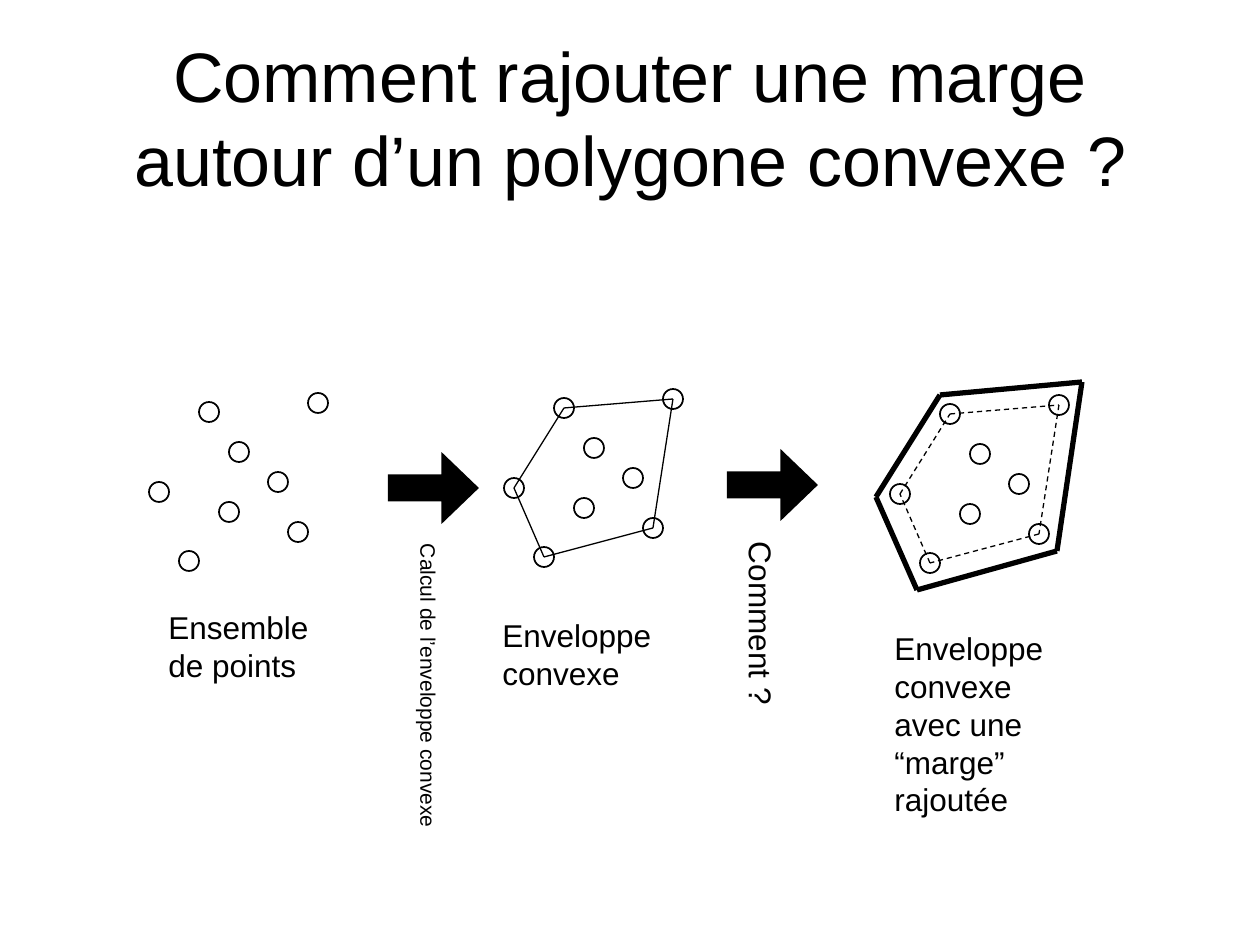
from lxml import etree
from pptx import Presentation
from pptx.dml.color import RGBColor
from pptx.enum.dml import MSO_LINE
from pptx.enum.shapes import MSO_CONNECTOR, MSO_SHAPE
from pptx.enum.text import MSO_ANCHOR, MSO_AUTO_SIZE, PP_ALIGN
from pptx.oxml.ns import qn
from pptx.util import Pt

SCALE = 914400 // 126
STRAIGHT = MSO_CONNECTOR.STRAIGHT
CIRCLE, ARROW = MSO_SHAPE.OVAL, MSO_SHAPE.RIGHT_ARROW
DASH = MSO_LINE.DASH
LEFT, CENTER = PP_ALIGN.LEFT, PP_ALIGN.CENTER
TOP, MIDDLE = MSO_ANCHOR.TOP, MSO_ANCHOR.MIDDLE
GROW, FIXED = MSO_AUTO_SIZE.SHAPE_TO_FIT_TEXT, MSO_AUTO_SIZE.NONE
BLACK = "000000"
DIAMETER = 20

# Centres relative to the top left corner of a point cluster
HULL = [(10, 99), (60, 19), (169, 10), (149, 139), (40, 168)]
INNER_POINTS = [(80, 119), (90, 59), (129, 89)]
MARGIN = [(-14, 102), (50, 0), (192, -13), (167, 156), (27, 195)]


def px(*lengths):
    return [length * SCALE for length in lengths]


def color(hex_string):
    return RGBColor.from_string(hex_string)


def write(shape, text, size=18, align=LEFT, anchor=TOP, auto_size=GROW):
    frame = shape.text_frame
    frame.word_wrap = True
    frame.auto_size = auto_size
    frame.vertical_anchor = anchor
    paragraph = frame.paragraphs[0]
    paragraph.alignment = align
    run = paragraph.add_run()
    run.text = text
    run.font.size = Pt(size)
    run.font.name = "Arial"
    run.font.color.rgb = color(BLACK)


def add_title(slide, box, text):
    title = slide.shapes.title
    title.left, title.top, title.width, title.height = px(*box)
    write(title, text, size=40, align=CENTER, anchor=MIDDLE, auto_size=FIXED)


def add_label(slide, box, text, size=18, rotation=0):
    label = slide.shapes.add_textbox(*px(*box))
    label.rotation = rotation
    write(label, text, size=size)


def add_polygon(slide, origin, corners, width, dash=None):
    """Join the corners with one straight line per side."""
    left, top = origin
    for (x1, y1), (x2, y2) in zip(corners, corners[1:] + corners[:1]):
        side = slide.shapes.add_connector(
            STRAIGHT, *px(left + x1, top + y1, left + x2, top + y2))
        side.line.color.rgb = color(BLACK)
        side.line.width = Pt(width)
        side.line.dash_style = dash
        etree.SubElement(side._element.spPr, qn("a:effectLst"))


def add_points(slide, origin):
    left, top = origin
    radius = DIAMETER // 2
    for x, y in HULL + INNER_POINTS:
        point = slide.shapes.add_shape(
            CIRCLE, *px(left + x - radius, top + y - radius, DIAMETER, DIAMETER))
        point.shadow.inherit = False
        point.fill.background()
        point.line.color.rgb = color(BLACK)
        point.line.width = Pt(1)


def add_arrow(slide, left, top):
    arrow = slide.shapes.add_shape(ARROW, *px(left, top, 91, 72))
    arrow.adjustments[0] = 0.375
    arrow.adjustments[1] = 0.52
    arrow.shadow.inherit = False
    arrow.fill.solid()
    arrow.fill.fore_color.rgb = color(BLACK)
    arrow.line.fill.background()


def add_point_set(slide, origin):
    add_points(slide, origin)
    add_label(slide, (156, 602, 199, 88), "Ensemble de points")


def add_hull(slide, origin):
    add_points(slide, origin)
    add_polygon(slide, origin, HULL, 0.75)
    add_label(slide, (490, 610, 180, 88), "Enveloppe convexe")


def add_hull_with_margin(slide, origin):
    add_points(slide, origin)
    add_polygon(slide, origin, HULL, 0.75, dash=DASH)
    add_polygon(slide, origin, MARGIN, 3)
    add_label(slide, (882, 623, 180, 202),
              "Enveloppe convexe avec une “marge” rajoutée")


def main():
    presentation = Presentation()
    presentation.slide_width, presentation.slide_height = px(1260, 945)
    slide = presentation.slides.add_slide(presentation.slide_layouts[5])

    add_title(slide, (63, 38, 1134, 157),
              "Comment rajouter une marge autour d’un polygone convexe ?")
    add_point_set(slide, (149, 393))
    add_hull(slide, (504, 389))
    add_hull_with_margin(slide, (890, 395))

    add_arrow(slide, 388, 452)
    add_label(slide, (268, 673, 321, 38), "Calcul de l’enveloppe convexe",
              size=12, rotation=90)
    add_arrow(slide, 727, 449)
    add_label(slide, (652, 614, 219, 50), "Comment ?", rotation=90)

    presentation.save("out.pptx")


if __name__ == "__main__":
    main()
